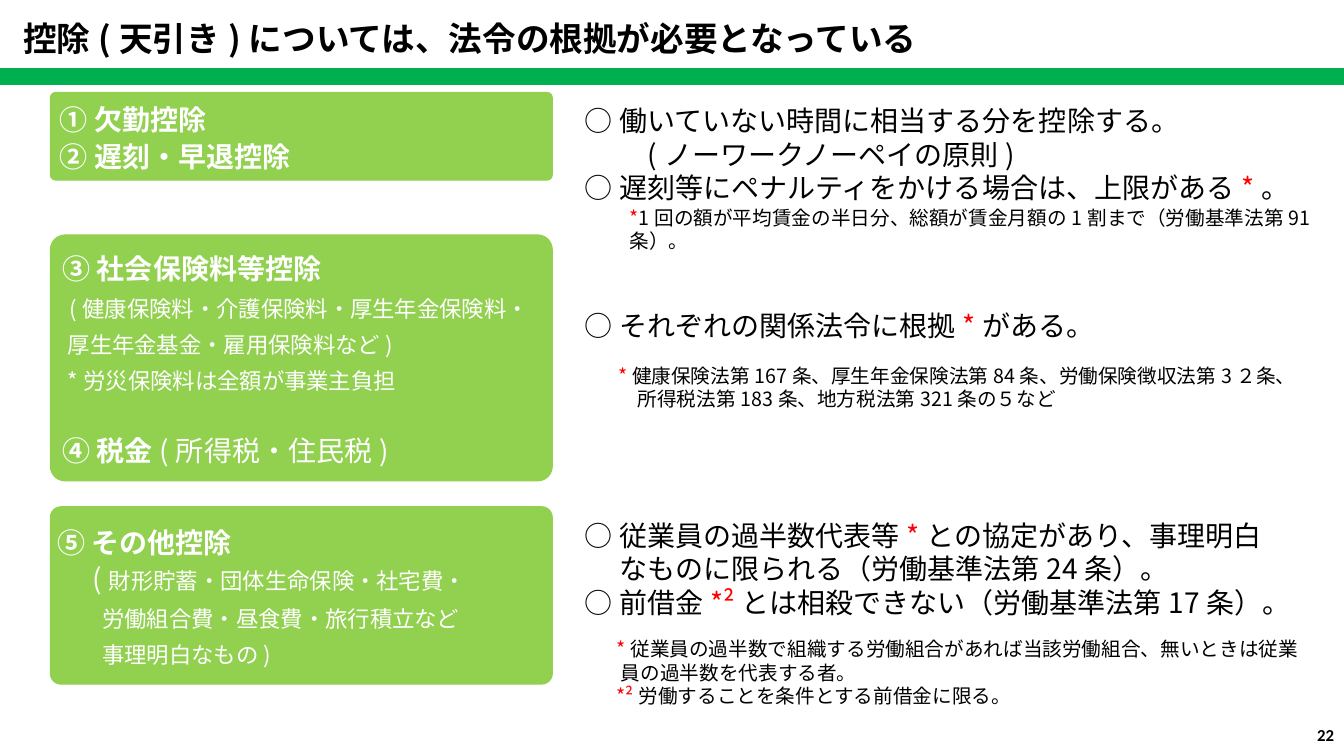
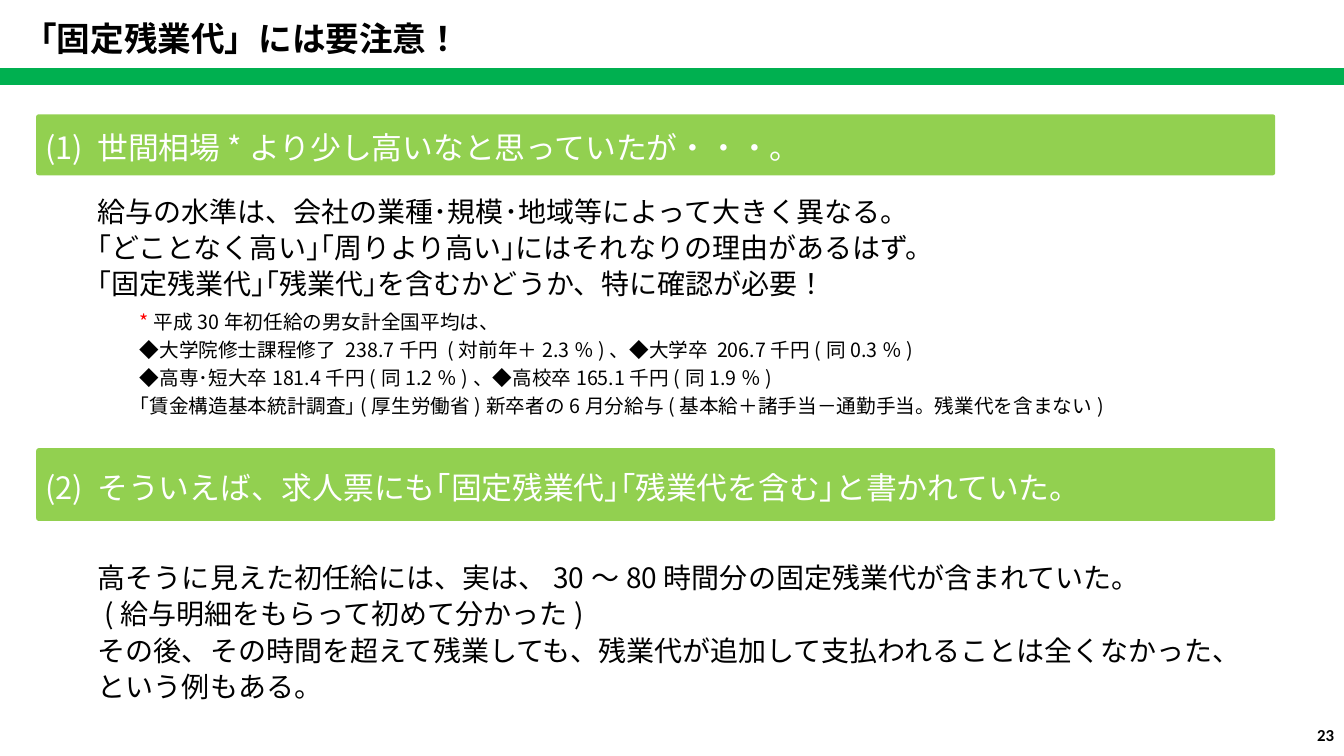
from dataclasses import dataclass

from pptx import Presentation
from pptx.dml.color import RGBColor
from pptx.enum.lang import MSO_LANGUAGE_ID
from pptx.enum.shapes import MSO_SHAPE
from pptx.enum.text import MSO_ANCHOR, PP_ALIGN
from pptx.oxml.ns import qn
from pptx.util import Cm, Pt

RECT, ROUND = MSO_SHAPE.RECTANGLE, MSO_SHAPE.ROUNDED_RECTANGLE
CALL = MSO_SHAPE.RECTANGULAR_CALLOUT
TOP, MIDDLE = MSO_ANCHOR.TOP, MSO_ANCHOR.MIDDLE
LEFT, RIGHT = PP_ALIGN.LEFT, PP_ALIGN.RIGHT
JAPAN = MSO_LANGUAGE_ID.JAPANESE
WIDE, HIGH = 33.87, 19.05
GREEN, LIME = "00B050", "92D050"
BLACK, WHITE, RED = "000000", "FFFFFF", "FF0000"
SANS, LATIN = "Noto Sans CJK JP", "Calibri"
INSET = (0.2, 0.1, 0.1, 0.1)


@dataclass
class Look:
    """Style of a run."""
    size: int
    hue: str = BLACK
    bold: bool = False
    font: str = SANS


@dataclass
class Row:
    """Paragraph whose parts, split by bars, swap between two looks."""
    text: str
    look: Look
    alt: Look = None
    left: float = 0
    hang: float = 0
    gap: int = 0


TITLE = Look(24, bold=True)
PAGE = Look(12, bold=True, font=LATIN)
HEAD = Look(20, WHITE, True)
PLAIN = Look(20, WHITE)
SMALL = Look(16, WHITE)
BAND = Look(22, WHITE)
FACT, FACT_RED = Look(20), Look(20, RED)
NOTE, NOTE_RED = Look(14), Look(14, RED)


def tint(code):
    """Turn a hex string into a colour."""
    return RGBColor.from_string(code)


def style(run, look):
    """Apply a look to a run."""
    font = run.font
    font.size, font.bold = Pt(look.size), look.bold
    font.color.rgb = tint(look.hue)
    font.name, font.language_id = look.font, JAPAN
    east = font._element.makeelement(qn("a:ea"), {"typeface": look.font})
    font._element.append(east)


def write(shape, rows, pitch=None, inset=INSET, anchor=MIDDLE, align=LEFT):
    """Fill a shape with rows of styled text."""
    frame = shape.text_frame
    frame.word_wrap, frame.vertical_anchor = True, anchor
    (frame.margin_left, frame.margin_top,
     frame.margin_right, frame.margin_bottom) = map(Cm, inset)
    for spot, row in enumerate(rows):
        para = frame.add_paragraph() if spot else frame.paragraphs[0]
        para.alignment = align
        if pitch:
            para.line_spacing = Pt(pitch)
        if row.gap:
            para.space_before = Pt(row.gap)
        if row.left:
            props = para._p.get_or_add_pPr()
            props.set("marL", str(Cm(row.left)))
            props.set("indent", str(Cm(-row.hang)))
        for turn, part in enumerate(row.text.split("|")):
            if part:
                run = para.add_run()
                run.text = part
                style(run, row.alt if turn % 2 else row.look)


def label(slide, box, rows, **opts):
    """Add a text box."""
    write(slide.shapes.add_textbox(*map(Cm, box)), rows, **opts)


def block(slide, box, hue=None, line=1, kind=RECT, bends=()):
    """Add a flat shape, clear when it has no hue."""
    shape = slide.shapes.add_shape(kind, *map(Cm, box))
    shape.shadow.inherit = False
    for spot, bend in enumerate(bends):
        shape.adjustments[spot] = bend
    if hue:
        shape.fill.solid()
        shape.fill.fore_color.rgb = tint(hue)
        shape.line.color.rgb = tint(hue)
        shape.line.width = Pt(line)
    else:
        shape.fill.background()
        shape.line.fill.background()
    return shape


def base(deck, title, page):
    """Add a slide with title, green bar and page number."""
    slide = deck.slides.add_slide(deck.slide_layouts[6])
    edge = (0.25, 0.13, 0.25, 0.13)
    block(slide, (0, 1.76, WIDE, 0.36), GREEN, 2)
    label(slide, (0.34, 0.33, 30, 1.27), [Row(title, TITLE)],
          inset=edge, anchor=TOP)
    label(slide, (25.97, 18.01, 7.9, 1.02), [Row(str(page), PAGE)],
          inset=edge, align=RIGHT)
    return slide


def rule(slide, box, heads, facts, fact_box, tail, notes, note_box, pad=0.2):
    """Place a green card with its facts and notes offset from it."""
    left, top = box[:2]
    card = block(slide, box, LIME, 0.75, ROUND, [0.06])
    write(card, heads, 26, (pad, 0.1, 0.1, 0.1))
    right, down, span, tall = fact_box
    call = block(slide, (left + right, top + down, span, tall),
                 kind=CALL, bends=tail)
    write(call, facts)
    right, down, span, tall = note_box
    label(slide, (left + right, top + down, span, tall), notes)


def topic(slide, box, head, bodies):
    """Place a green heading band with clear boxes offset from it."""
    left, top = box[:2]
    band = block(slide, box, LIME, 1, ROUND, [0.03])
    write(band, [Row(head, BAND)], 30)
    for (right, down, span, tall), pitch, rows in bodies:
        body = block(slide, (left + right, top + down, span, tall),
                     kind=ROUND, bends=[0.03])
        write(body, rows, pitch, (0.2, 0.1, 0, 0.1))


def legal(deck):
    """Build the slide on the legal basis of deductions."""
    slide = base(deck, "控除(天引き)については、法令の根拠が必要となっている", 22)
    rule(slide, (1.27, 2.33, 12.65, 2.21),
         [Row("① 欠勤控除", HEAD), Row("② 遅刻・早退控除", HEAD)],
         [Row("○ 働いていない時間に相当する分を控除する。", FACT),
          Row("(ノーワークノーペイの原則)", FACT, left=1.59),
          Row("○ 遅刻等にペナルティをかける場合は、上限がある|*|。",
              FACT, FACT_RED)],
         (13.27, 0, 18.21, 3.1), (-0.49, -0.37),
         [Row("|*|1回の額が平均賃金の半日分、総額が賃金月額の1割まで"
              "（労働基準法第91条）。", NOTE, NOTE_RED)],
         (14.4, 3, 17.48, 0.89))
    rule(slide, (1.27, 5.92, 12.65, 6.2),
         [Row("③ 社会保険料等控除", HEAD),
          Row("(健康保険料・介護保険料・厚生年金保険料・", SMALL, left=0.18),
          Row("厚生年金基金・雇用保険料など)", SMALL, left=0.13),
          Row("*労災保険料は全額が事業主負担", SMALL, left=0.13),
          Row("④ 税金|(所得税・住民税)", HEAD, PLAIN, gap=26)],
         [Row("○ それぞれの関係法令に根拠|*|がある。", FACT, FACT_RED)],
         (13.27, 0.81, 18.21, 2.92), (-0.54, -0.19),
         [Row("|*|健康保険法第167条、厚生年金保険法第84条、"
              "労働保険徴収法第3２条、所得税法第183条、地方税法第321条の５など",
              NOTE, NOTE_RED, left=0.49, hang=0.49)],
         (14.11, 3.06, 17.35, 1.55))
    rule(slide, (1.27, 12.77, 12.65, 4.47),
         [Row("⑤ その他控除", HEAD),
          Row("(|財形貯蓄・団体生命保険・社宅費・", PLAIN, SMALL, left=0.89),
          Row("労働組合費・昼食費・旅行積立など", SMALL, left=1.13),
          Row("事理明白なもの)", SMALL, left=1.13)],
         [Row("○ 従業員の過半数代表等|*|との協定があり、事理明白",
              FACT, FACT_RED),
          Row("なものに限られる（労働基準法第24条）。", FACT, left=0.87),
          Row("○ 前借金|*²|とは相殺できない（労働基準法第17条）。",
              FACT, FACT_RED)],
         (13.27, -0.04, 18.21, 3.2), (-0.61, 0.19),
         [Row("|*|従業員の過半数で組織する労働組合があれば当該労働組合、"
              "無いときは従業", NOTE, NOTE_RED),
          Row("員の過半数を代表する者。", NOTE, left=0.11),
          Row("|*²|労働することを条件とする前借金に限る。", NOTE, NOTE_RED)],
         (14.07, 3.16, 17.6, 2.03), pad=0.1)


def extra(deck):
    """Build the slide on fixed overtime pay."""
    slide = base(deck, "「固定残業代」には要注意！", 23)
    body = [Row(text, FACT, left=0.71) for text in (
        "給与の水準は、会社の業種･規模･地域等によって大きく異なる。",
        "｢どことなく高い｣｢周りより高い｣にはそれなりの理由があるはず。",
        "｢固定残業代｣｢残業代｣を含むかどうか、特に確認が必要！")]
    notes = [Row(text, NOTE, NOTE_RED) for text in (
        "|*|平成30年初任給の男女計全国平均は、",
        "◆大学院修士課程修了 238.7千円 (対前年＋2.3％)、"
        "◆大学卒 206.7千円(同0.3％)",
        "◆高専･短大卒181.4千円(同1.2％)、◆高校卒165.1千円(同1.9％)",
        "｢賃金構造基本統計調査｣(厚生労働省)新卒者の6月分給与"
        "(基本給＋諸手当－通勤手当。残業代を含まない)")]
    case = [Row(text, FACT, left=left) for text, left in (
        ("高そうに見えた初任給には、実は、30～80時間分の固定残業代が"
         "含まれていた。", 0.71),
        ("(給与明細をもらって初めて分かった)", 0.87),
        ("その後、その時間を超えて残業しても、残業代が追加して"
         "支払われることは全くなかった、", 0.71),
        ("という例もある。", 0.71))]
    topic(slide, (0.93, 2.9, 31.19, 1.5),
          "(1) 世間相場*より少し高いなと思っていたが・・・。",
          [((0.59, 1.8, 30.61, 3), 26, body),
           ((2.37, 4.82, 25.78, 2.77), 20, notes)])
    topic(slide, (0.93, 11.31, 31.19, 1.8),
          "(2) そういえば、求人票にも｢固定残業代｣｢残業代を含む｣と書かれていた。",
          [((0.59, 2.38, 30.61, 4.39), 26, case)])


def main():
    """Build and save the deck."""
    deck = Presentation()
    deck.slide_width, deck.slide_height = Cm(WIDE), Cm(HIGH)
    legal(deck)
    extra(deck)
    deck.save("out.pptx")


if __name__ == "__main__":
    main()
